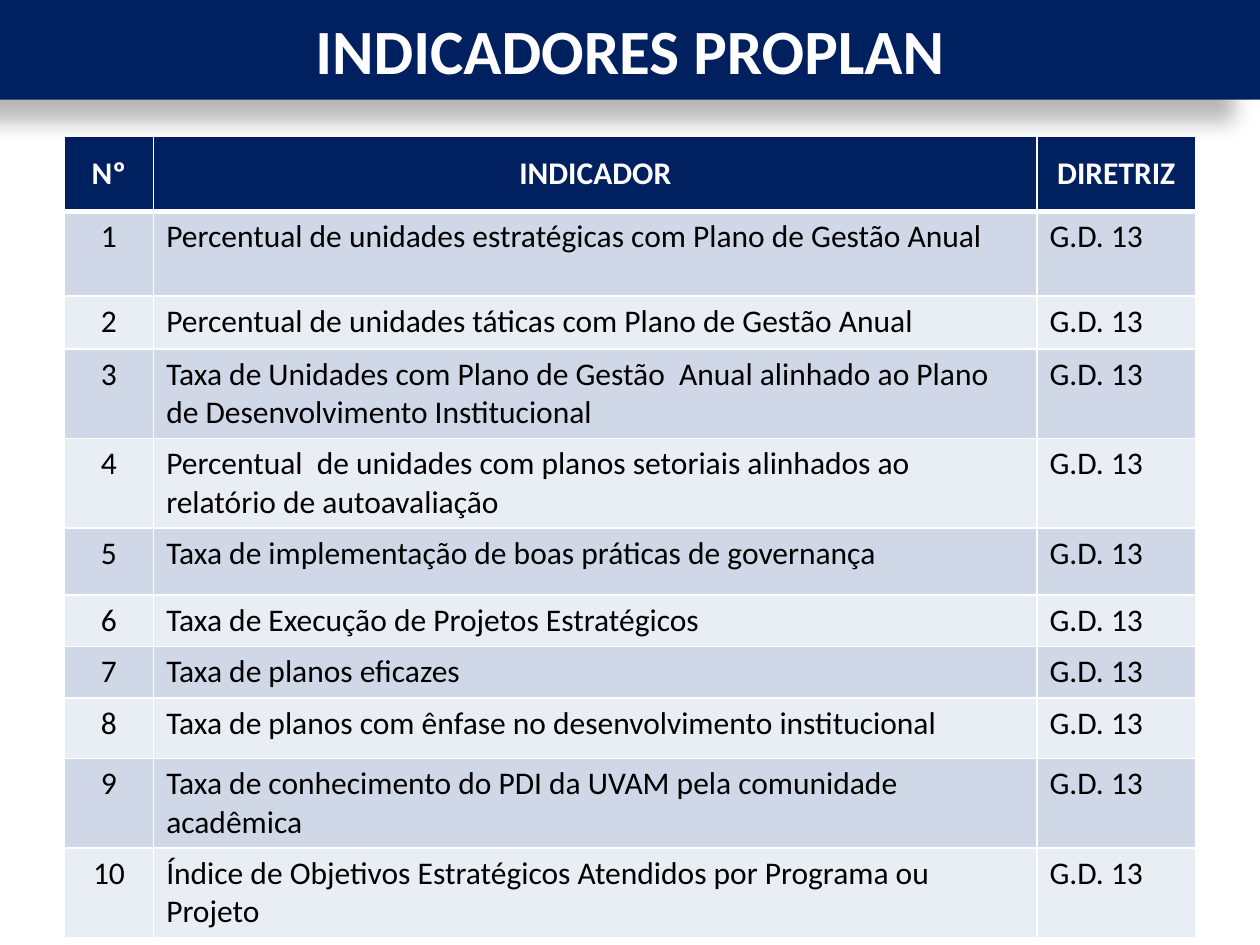
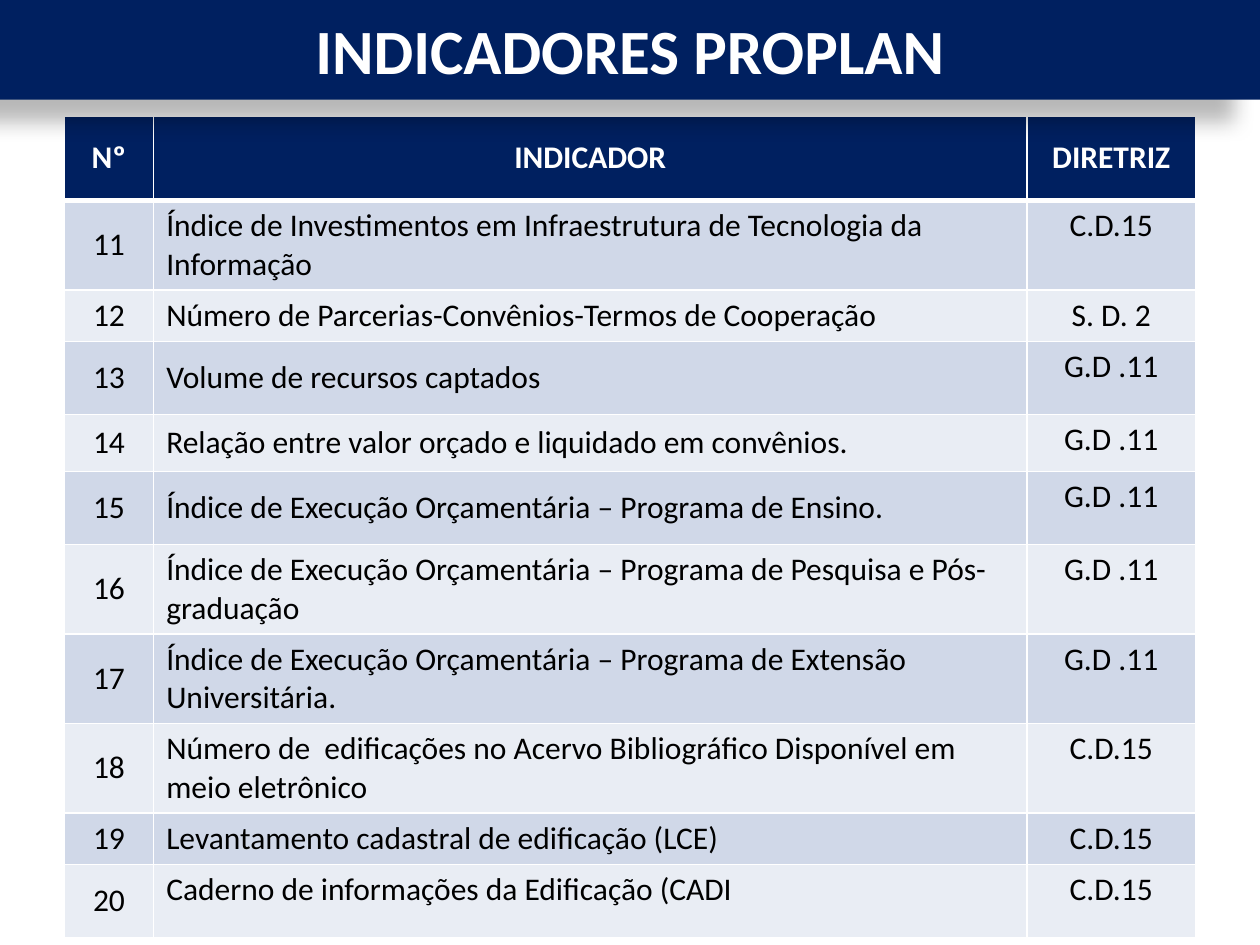
from dataclasses import dataclass

from lxml import etree
from pptx import Presentation
from pptx.dml.color import RGBColor
from pptx.enum import text
from pptx.oxml import ns
from pptx.util import Inches, Pt

NAVY = RGBColor(0x00, 0x20, 0x60)
WHITE = RGBColor(0xFF, 0xFF, 0xFF)
BLACK = RGBColor(0x00, 0x00, 0x00)
BAND_DARK = RGBColor(0xD0, 0xD8, 0xE8)
BAND_LIGHT = RGBColor(0xE9, 0xED, 0xF4)

FONT = "Calibri"
TITLE = "INDICADORES PROPLAN"
HEADINGS = ("Nº", "INDICADOR", "DIRETRIZ")
TITLE_ONLY = 5
TABLE_LEFT = 0.51
THIN, THICK = 1, 3

LEFT, CENTER = text.PP_ALIGN.LEFT, text.PP_ALIGN.CENTER
TOP, MIDDLE = text.MSO_ANCHOR.TOP, text.MSO_ANCHOR.MIDDLE


@dataclass(frozen=True)
class Indicator:
    description: str
    guideline: str
    height: float
    anchor: text.MSO_ANCHOR = MIDDLE


@dataclass(frozen=True)
class IndicatorPage:
    first_number: int
    top: float
    widths: tuple[float, float, float]
    header_height: float
    number_anchor: text.MSO_ANCHOR
    guideline_align: text.PP_ALIGN
    indicators: list[Indicator]


PAGES = [
    IndicatorPage(1, 1.08, (0.71, 7.01, 1.26), 0.6, TOP, LEFT, [
        Indicator("Percentual de unidades estratégicas com Plano de Gestão Anual", "G.D. 13", 0.67, TOP),
        Indicator("Percentual de unidades táticas com Plano de Gestão Anual", "G.D. 13", 0.42, TOP),
        Indicator("Taxa de Unidades com Plano de Gestão  Anual alinhado ao Plano de "
                  "Desenvolvimento Institucional", "G.D. 13", 0.71),
        Indicator("Percentual  de unidades com planos setoriais alinhados ao relatório de "
                  "autoavaliação", "G.D. 13", 0.71, TOP),
        Indicator("Taxa de implementação de boas práticas de governança", "G.D. 13", 0.53, TOP),
        Indicator("Taxa de Execução de Projetos Estratégicos", "G.D. 13", 0.41, TOP),
        Indicator("Taxa de planos eficazes", "G.D. 13", 0.41, TOP),
        Indicator("Taxa de planos com ênfase no desenvolvimento institucional", "G.D. 13", 0.48, TOP),
        Indicator("Taxa de conhecimento do PDI da UVAM pela comunidade acadêmica", "G.D. 13", 0.71, TOP),
        Indicator("Índice de Objetivos Estratégicos Atendidos por Programa ou Projeto", "G.D. 13", 0.71),
    ]),
    IndicatorPage(11, 0.92, (0.71, 6.93, 1.34), 0.67, MIDDLE, CENTER, [
        Indicator("Índice de Investimentos em Infraestrutura de Tecnologia da Informação", "C.D.15", 0.71, TOP),
        Indicator("Número de Parcerias-Convênios-Termos de Cooperação", "S. D. 2", 0.41),
        Indicator("Volume de recursos captados", "G.D .11", 0.58),
        Indicator("Relação entre valor orçado e liquidado em convênios.", "G.D .11", 0.45),
        Indicator("Índice de Execução Orçamentária – Programa de Ensino.", "G.D .11", 0.58),
        Indicator("Índice de Execução Orçamentária – Programa de Pesquisa e Pós-graduação", "G.D .11", 0.71),
        Indicator("Índice de Execução Orçamentária – Programa de Extensão Universitária.", "G.D .11", 0.71),
        Indicator("Número de  edificações no Acervo Bibliográfico Disponível em meio eletrônico",
                  "C.D.15", 0.71),
        Indicator("Levantamento cadastral de edificação (LCE)", "C.D.15", 0.41, TOP),
        Indicator("Caderno de informações da Edificação (CADI", "C.D.15", 0.58, TOP),
    ]),
]


def write(frame, words: str, size: int, color: RGBColor, bold: bool, align: text.PP_ALIGN) -> None:
    paragraph = frame.paragraphs[0]
    paragraph.alignment = align
    run = paragraph.add_run()
    run.text = words
    run.font.name = FONT
    run.font.size = Pt(size)
    run.font.bold = bold
    run.font.color.rgb = color


def add_color(parent, color: RGBColor):
    return etree.SubElement(parent, ns.qn("a:srgbClr"), val=str(color))


def cast_shadow(shape) -> None:
    effects = etree.SubElement(shape._element.spPr, ns.qn("a:effectLst"))
    shadow = etree.SubElement(effects, ns.qn("a:outerShdw"), blurRad=str(Pt(11.8)),
                              dist=str(Pt(19.7)), dir=str(141 * 60000),
                              algn="tr", rotWithShape="0")
    etree.SubElement(add_color(shadow, BLACK), ns.qn("a:alpha"), val="28000")


def set_borders(cell, top: int, bottom: int) -> None:
    properties = cell._tc.get_or_add_tcPr()
    for side, width in (("L", THIN), ("R", THIN), ("T", top), ("B", bottom)):
        line = etree.SubElement(properties, ns.qn(f"a:ln{side}"), w=str(Pt(width)))
        add_color(etree.SubElement(line, ns.qn("a:solidFill")), WHITE)


def fill_cell(cell, words: str, row: int, align: text.PP_ALIGN, anchor: text.MSO_ANCHOR) -> None:
    """Style a cell by its row: the header is row 0, the bands alternate below it."""
    header = row == 0
    set_borders(cell, THICK if row == 1 else THIN, THICK if header else THIN)
    cell.fill.solid()
    cell.fill.fore_color.rgb = NAVY if header else BAND_DARK if row % 2 else BAND_LIGHT
    cell.vertical_anchor = anchor
    write(cell.text_frame, words, 18, WHITE if header else BLACK, header, align)


def add_indicator_table(slide, page: IndicatorPage) -> None:
    heights = [page.header_height] + [item.height for item in page.indicators]
    table = slide.shapes.add_table(
        len(heights), len(HEADINGS), Inches(TABLE_LEFT), Inches(page.top),
        Inches(sum(page.widths)), Inches(sum(heights))).table
    for column, width in zip(table.columns, page.widths):
        column.width = Inches(width)
    for row, height in zip(table.rows, heights):
        row.height = Inches(height)

    for column, heading in enumerate(HEADINGS):
        fill_cell(table.cell(0, column), heading, 0, CENTER, MIDDLE)
    for row, item in enumerate(page.indicators, start=1):
        number = str(page.first_number + row - 1)
        fill_cell(table.cell(row, 0), number, row, CENTER, page.number_anchor)
        fill_cell(table.cell(row, 1), item.description, row, LEFT, item.anchor)
        fill_cell(table.cell(row, 2), item.guideline, row, page.guideline_align, TOP)


def format_title_band(slide, width: int) -> None:
    """Turn the title into a full-width band whose shadow falls over the table."""
    band = slide.shapes.title
    band.left, band.top, band.width, band.height = 0, 0, width, Inches(0.79)
    band.fill.solid()
    band.fill.fore_color.rgb = NAVY
    band.line.fill.background()
    cast_shadow(band)
    band.text_frame.auto_size = text.MSO_AUTO_SIZE.NONE
    band.text_frame.vertical_anchor = MIDDLE
    write(band.text_frame, TITLE, 36, WHITE, True, CENTER)
    slide.shapes._spTree.append(band._element)


def main() -> None:
    deck = Presentation()
    deck.slide_width, deck.slide_height = Inches(10), Inches(7.5)
    for page in PAGES:
        slide = deck.slides.add_slide(deck.slide_layouts[TITLE_ONLY])
        add_indicator_table(slide, page)
        format_title_band(slide, deck.slide_width)
    deck.save("out.pptx")


if __name__ == "__main__":
    main()
